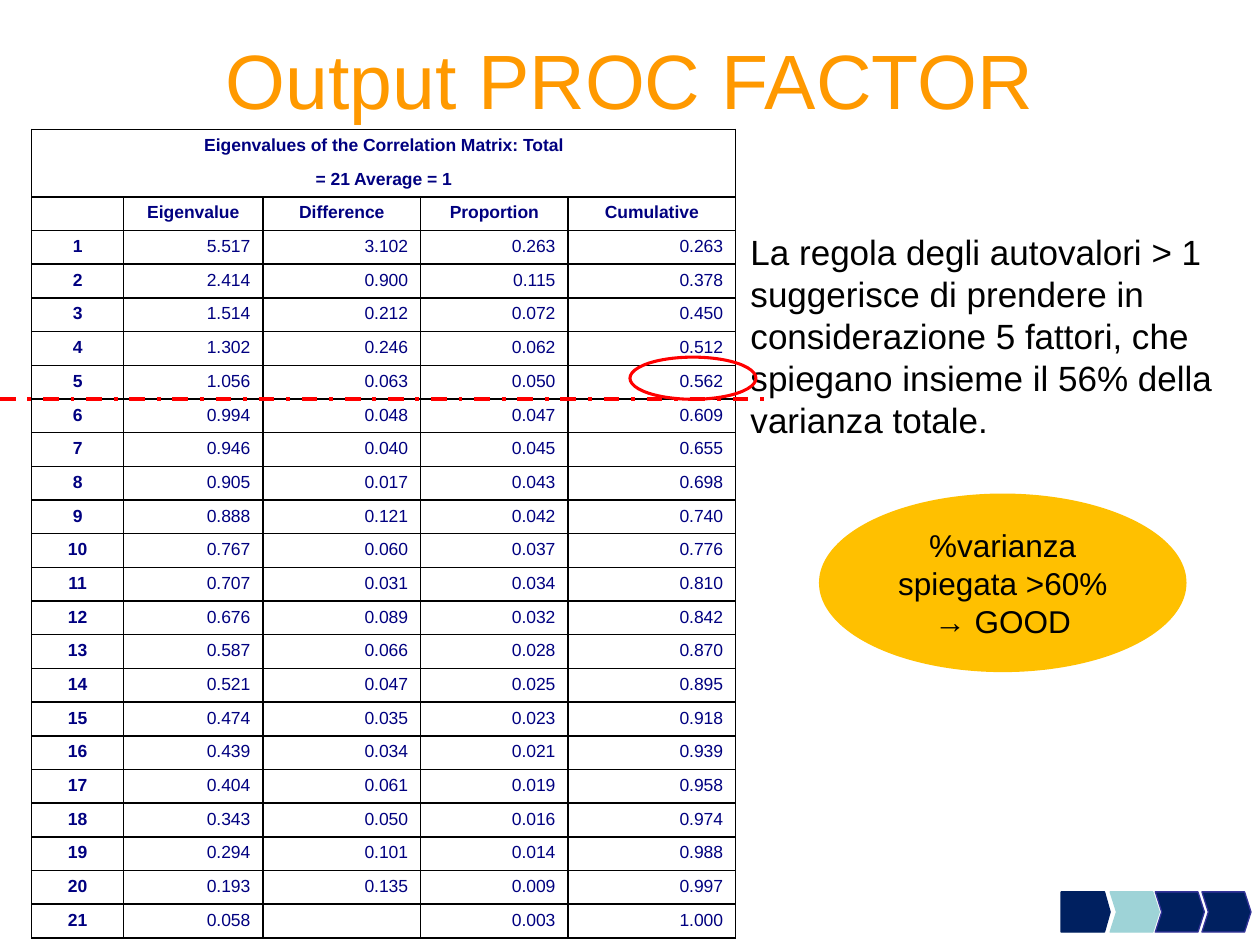
"""Build the PROC FACTOR slide with its eigenvalue table and comments."""
from dataclasses import dataclass

from lxml import etree
from pptx import Presentation
from pptx import util as u
from pptx.dml.color import RGBColor
from pptx.enum import dml, shapes, text
from pptx.oxml import ns


@dataclass(frozen=True)
class Theme:
    font: str = "Arial"
    title: str = "FF9900"
    table_text: str = "000080"
    body: str = "000000"
    paper: str = "FFFFFF"
    mark: str = "FF0000"
    bubble: str = "FFC000"
    navy: str = "002060"
    aqua: str = "9ED3D7"
    outline: str = "333399"
    title_size: int = 44
    body_size: int = 20
    bubble_size: int = 18
    table_size: int = 10


THEME = Theme()
TITLES = ("Eigenvalues of the Correlation Matrix: Total", "= 21 Average = 1")
HEADERS = ("", "Eigenvalue", "Difference", "Proportion", "Cumulative")
EIGENVALUES = (
    ("5.517", "3.102", "0.263", "0.263"),
    ("2.414", "0.900", "0.115", "0.378"),
    ("1.514", "0.212", "0.072", "0.450"),
    ("1.302", "0.246", "0.062", "0.512"),
    ("1.056", "0.063", "0.050", "0.562"),
    ("0.994", "0.048", "0.047", "0.609"),
    ("0.946", "0.040", "0.045", "0.655"),
    ("0.905", "0.017", "0.043", "0.698"),
    ("0.888", "0.121", "0.042", "0.740"),
    ("0.767", "0.060", "0.037", "0.776"),
    ("0.707", "0.031", "0.034", "0.810"),
    ("0.676", "0.089", "0.032", "0.842"),
    ("0.587", "0.066", "0.028", "0.870"),
    ("0.521", "0.047", "0.025", "0.895"),
    ("0.474", "0.035", "0.023", "0.918"),
    ("0.439", "0.034", "0.021", "0.939"),
    ("0.404", "0.061", "0.019", "0.958"),
    ("0.343", "0.050", "0.016", "0.974"),
    ("0.294", "0.101", "0.014", "0.988"),
    ("0.193", "0.135", "0.009", "0.997"),
    ("0.058", "", "0.003", "1.000"),
)
COLUMN_WIDTHS = (1.85, 2.81, 3.18, 2.97, 3.38)
TABLE_HEIGHT = 16.26


def box(left, top, width, height):
    return u.Cm(left), u.Cm(top), u.Cm(width), u.Cm(height)


def write(paragraph, words, size, color, align, bold=False):
    paragraph.text = words
    paragraph.alignment = align
    font = paragraph.font
    font.name, font.size, font.bold = THEME.font, u.Pt(size), bold
    font.color.rgb = RGBColor.from_string(color)


def add_text(slide, place, words, size, color, align, anchor, left_inset=0.25):
    frame = slide.shapes.add_textbox(*box(*place)).text_frame
    frame.word_wrap = True
    frame.vertical_anchor = anchor
    frame.margin_left = u.Cm(left_inset)
    write(frame.paragraphs[0], words, size, color, align)


def add_shape(slide, kind, place, fill=None, line=None, width=0.75):
    shape = slide.shapes.add_shape(kind, *box(*place))
    shape.shadow.inherit = False
    if fill:
        shape.fill.solid()
        shape.fill.fore_color.rgb = RGBColor.from_string(fill)
    else:
        shape.fill.background()
    if line:
        shape.line.color.rgb = RGBColor.from_string(line)
        shape.line.width = u.Pt(width)
    else:
        shape.line.fill.background()
    return shape


def set_borders(cell, sides):
    properties = cell._tc.get_or_add_tcPr()
    for side in "LRTB":
        border = etree.SubElement(properties, ns.qn(f"a:ln{side}"), w=str(u.Pt(1)))
        if side in sides:
            fill = etree.SubElement(border, ns.qn("a:solidFill"))
            etree.SubElement(fill, ns.qn("a:srgbClr"), val=THEME.body)
        else:
            etree.SubElement(border, ns.qn("a:noFill"))


def fill_cell(cell, words, align, bold, sides="LRTB"):
    set_borders(cell, sides)
    cell.fill.solid()
    cell.fill.fore_color.rgb = RGBColor.from_string(THEME.paper)
    cell.vertical_anchor = text.MSO_ANCHOR.TOP
    paragraph = cell.text_frame.paragraphs[0]
    write(paragraph, words, THEME.table_size, THEME.table_text, align, bold)
    if not words:
        size = str(THEME.table_size * 100)
        etree.SubElement(paragraph._p, ns.qn("a:endParaRPr"), sz=size)


def add_eigenvalue_table(slide):
    rows = [(title, "", "", "", "") for title in TITLES] + [HEADERS]
    rows += [(str(number), *values) for number, values in enumerate(EIGENVALUES, 1)]
    place = box(0.64, 2.61, sum(COLUMN_WIDTHS), TABLE_HEIGHT)
    table = slide.shapes.add_table(len(rows), len(HEADERS), *place).table
    for column, width in zip(table.columns, COLUMN_WIDTHS):
        column.width = u.Cm(width)
    title_sides = ("LRT", "LRB")
    for row, values in enumerate(rows):
        is_title = row < len(TITLES)
        for column, words in enumerate(values):
            heading = row <= len(TITLES) or column == 0
            align = text.PP_ALIGN.CENTER if heading else text.PP_ALIGN.RIGHT
            sides = title_sides[row] if is_title else "LRTB"
            fill_cell(table.cell(row, column), words, align, heading, sides)
        if is_title:
            table.cell(row, 0).merge(table.cell(row, len(HEADERS) - 1))


def add_cutoff(slide):
    height = u.Cm(8.04)
    line = slide.shapes.add_connector(
        shapes.MSO_CONNECTOR.STRAIGHT, 0, height, u.Cm(15.44), height)
    line.line.color.rgb = RGBColor.from_string(THEME.mark)
    line.line.width = u.Pt(2.25)
    line.line.dash_style = dml.MSO_LINE.DASH_DOT
    etree.SubElement(line._element.spPr, ns.qn("a:effectLst"))


def add_bubble(slide):
    bubble = add_shape(slide, shapes.MSO_SHAPE.OVAL, (16.51, 9.95, 7.41, 3.6), THEME.bubble)
    write(bubble.text_frame.paragraphs[0], "%varianza spiegata >60% → GOOD",
          THEME.bubble_size, THEME.body, text.PP_ALIGN.CENTER)


def add_progress_arrows(slide):
    chevron, pentagon = shapes.MSO_SHAPE.CHEVRON, shapes.MSO_SHAPE.PENTAGON
    for kind, left, fill, line, point in (
            (chevron, 23.29, THEME.navy, THEME.outline, 0.16),
            (pentagon, 21.39, THEME.navy, THEME.navy, 0.14),
            (chevron, 22.38, THEME.aqua, THEME.aqua, 0.16),
            (chevron, 24.23, THEME.navy, THEME.outline, 0.16)):
        arrow = add_shape(slide, kind, (left, 17.98, 0.99, 0.81), fill, line)
        arrow.adjustments[0] = point


def main():
    presentation = Presentation()
    presentation.slide_width, presentation.slide_height = u.Cm(25.4), u.Cm(19.05)
    slide = presentation.slides.add_slide(presentation.slide_layouts[6])
    add_text(slide, (1.27, 0, 22.86, 3.18), "Output PROC FACTOR", THEME.title_size,
             THEME.title, text.PP_ALIGN.CENTER, text.MSO_ANCHOR.MIDDLE)
    add_eigenvalue_table(slide)
    add_text(slide, (13.61, 4.52, 11.56, 6.17),
             "La regola degli autovalori > 1 suggerisce di prendere in considerazione "
             "5 fattori, che spiegano insieme il 56% della varianza totale.",
             THEME.body_size, THEME.body, text.PP_ALIGN.LEFT, text.MSO_ANCHOR.TOP, 1.52)
    add_cutoff(slide)
    add_shape(slide, shapes.MSO_SHAPE.OVAL, (12.7, 7.2, 2.54, 0.85),
              line=THEME.mark, width=1.75)
    add_bubble(slide)
    add_progress_arrows(slide)
    presentation.save("out.pptx")


if __name__ == "__main__":
    main()
